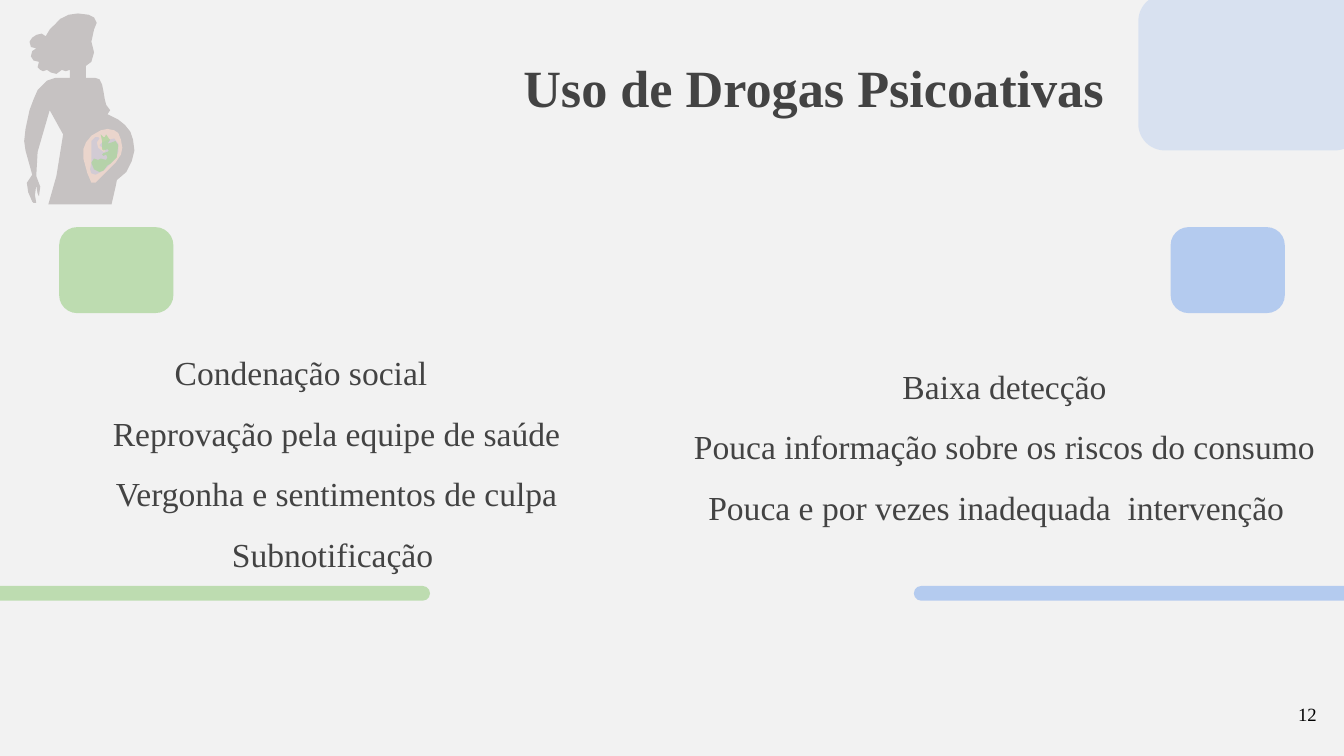
from dataclasses import dataclass

from lxml import etree
from pptx import Presentation
from pptx import util as u
from pptx.dml.color import RGBColor
from pptx.enum import shapes, text
from pptx.oxml.ns import qn


@dataclass(frozen=True)
class Theme:
    font: str = "Times New Roman"
    background: str = "F2F2F2"
    ink: str = "434343"
    number_ink: str = "000000"
    skin: str = "C6C2C2"
    womb: str = "F2D9CF"
    green: str = "ABD59A"
    blue: str = "8CB1EE"
    title_size: int = 28
    body_size: int = 18
    number_size: int = 10


THEME = Theme()

BODY = [
    (0.41, 0), (0.34, 0.01), (0.28, 0.04), (0.24, 0.08), (0.2, 0.12), (0.17, 0.17),
    (0.14, 0.15), (0.1, 0.16), (0.07, 0.18), (0.05, 0.21), (0.06, 0.25), (0.1, 0.26),
    (0.07, 0.28), (0.06, 0.32), (0.08, 0.35), (0.12, 0.36), (0.11, 0.4), (0.13, 0.42),
    (0.15, 0.43), (0.18, 0.42), (0.21, 0.44), (0.25, 0.45), (0.29, 0.42), (0.32, 0.43),
    (0.35, 0.42), (0.35, 0.48), (0.3, 0.48), (0.24, 0.48), (0.18, 0.5), (0.11, 0.57),
    (0.08, 0.64), (0.05, 0.72), (0.02, 0.86), (0.01, 0.95), (0.02, 1.02),
    (0.07, 1.2), (0.03, 1.26), (0.04, 1.33), (0.07, 1.4), (0.08, 1.41), (0.1, 1.41),
    (0.09, 1.35), (0.1, 1.28), (0.11, 1.34), (0.12, 1.36), (0.13, 1.29), (0.1, 1.21),
    (0.11, 1.03), (0.2, 0.72), (0.3, 0.9), (0.25, 1.21), (0.19, 1.42), (0.66, 1.42),
    (0.69, 1.29), (0.7, 1.24), (0.77, 1.18), (0.81, 1.1), (0.83, 1.02), (0.82, 0.94),
    (0.8, 0.88), (0.76, 0.83), (0.71, 0.79), (0.63, 0.75), (0.65, 0.72), (0.62, 0.68),
    (0.61, 0.64), (0.6, 0.58), (0.59, 0.53), (0.57, 0.49), (0.54, 0.48), (0.47, 0.48),
    (0.47, 0.39), (0.51, 0.36), (0.53, 0.29), (0.51, 0.21), (0.53, 0.12), (0.55, 0.07),
    (0.53, 0.03), (0.49, 0.01),
]
WOMB = [
    (0.63, 0.86), (0.58, 0.87), (0.51, 0.91), (0.47, 0.96), (0.45, 1.01), (0.45, 1.08),
    (0.48, 1.19), (0.51, 1.26), (0.54, 1.26), (0.69, 1.11), (0.73, 1.05), (0.74, 1),
    (0.73, 0.94), (0.71, 0.89), (0.68, 0.87),
]
FLUID = [
    (0.54, 0.92), (0.51, 0.95), (0.51, 1.11), (0.5, 1.16), (0.51, 1.19), (0.54, 1.2),
    (0.6, 1.17), (0.69, 1.08), (0.71, 1.03), (0.71, 0.97), (0.68, 0.93), (0.64, 0.94),
    (0.59, 0.96), (0.57, 0.98), (0.58, 0.99), (0.61, 1.01), (0.61, 1.03), (0.6, 1.03),
    (0.56, 1), (0.55, 0.96), (0.57, 0.93), (0.56, 0.92),
]
FETUS = [
    (0.62, 0.9), (0.61, 0.92), (0.6, 0.92), (0.58, 0.9), (0.59, 0.95), (0.59, 1.01),
    (0.6, 1.02), (0.63, 1.01), (0.64, 1.02), (0.63, 1.03), (0.6, 1.04), (0.59, 1.05),
    (0.6, 1.06), (0.62, 1.05), (0.63, 1.07), (0.62, 1.09), (0.58, 1.08), (0.56, 1.09),
    (0.53, 1.08), (0.51, 1.11), (0.53, 1.16), (0.57, 1.18), (0.6, 1.17), (0.63, 1.13),
    (0.65, 1.12), (0.7, 1.07), (0.71, 0.98), (0.69, 0.95), (0.66, 0.96), (0.63, 0.97),
    (0.65, 0.94), (0.64, 0.93),
]


def paint(shape, color, opacity):
    shape.shadow.inherit = False
    shape.line.fill.background()
    shape.fill.solid()
    shape.fill.fore_color.rgb = RGBColor.from_string(color)
    if opacity < 100:
        color_element = shape.fill._xPr.find(qn("a:solidFill"))[0]
        etree.SubElement(color_element, qn("a:alpha"), val=str(opacity * 1000))


def add_rounded(slide, box, corner, color, opacity):
    rounded = slide.shapes.add_shape(
        shapes.MSO_SHAPE.ROUNDED_RECTANGLE, *map(u.Inches, box))
    rounded.adjustments[0] = corner
    paint(rounded, color, opacity)


def add_outline(slide, left, top, points, color, opacity):
    corners = [(u.Inches(left + x), u.Inches(top + y)) for x, y in points]
    builder = slide.shapes.build_freeform(*corners[0])
    builder.add_line_segments(corners[1:], close=True)
    paint(builder.convert_to_shape(), color, opacity)


def add_frame(slide, box, inset=0.1):
    frame = slide.shapes.add_textbox(*map(u.Inches, box)).text_frame
    frame.word_wrap = True
    frame.margin_left = frame.margin_right = u.Inches(inset)
    frame.margin_top = frame.margin_bottom = u.Inches(inset)
    return frame


def add_run(paragraph, wording, size, color, bold=False):
    run = paragraph.add_run()
    run.text = wording
    run.font.name = THEME.font
    run.font.size = u.Pt(size)
    run.font.bold = bold
    run.font.color.rgb = RGBColor.from_string(color)


def add_title(slide, box, wording):
    heading = add_frame(slide, box).paragraphs[0]
    heading.alignment = text.PP_ALIGN.RIGHT
    add_run(heading, wording, THEME.title_size, THEME.ink, bold=True)


def add_barriers(slide, box, barriers):
    frame = add_frame(slide, box)
    for index, (wording, left, indent, right) in enumerate(barriers):
        barrier = frame.add_paragraph() if index else frame.paragraphs[0]
        barrier.alignment = text.PP_ALIGN.CENTER
        barrier.line_spacing = 1.5
        properties = barrier._p.get_or_add_pPr()
        for name, length in (("marL", left), ("marR", right), ("indent", indent)):
            properties.set(name, str(u.Inches(length)))
        add_run(barrier, wording, THEME.body_size, THEME.ink)


def add_pregnant_woman(slide, left, top):
    for points, color, opacity in (
        (BODY, THEME.skin, 100),
        (WOMB, THEME.womb, 84),
        (FLUID, THEME.blue, 25),
        (FETUS, THEME.green, 74),
    ):
        add_outline(slide, left, top, points, color, opacity)


def add_column_accents(slide, tile_left, bar_left, bar_width, color, opacity):
    add_rounded(slide, (bar_left, 4.36, bar_width, 0.11), 0.5, color, opacity)
    add_rounded(slide, (tile_left, 1.69, 0.85, 0.64), 0.21, color, opacity)


def add_page_number(slide, box, number):
    frame = add_frame(slide, box)
    frame.word_wrap = False
    frame.margin_top = frame.margin_bottom = u.Inches(0.05)
    add_run(frame.paragraphs[0], number, THEME.number_size, THEME.number_ink)


def main():
    deck = Presentation()
    deck.slide_width, deck.slide_height = u.Inches(10), u.Inches(10 * 9 / 16)
    slide = deck.slides.add_slide(deck.slide_layouts[6])
    slide.background.fill.solid()
    slide.background.fill.fore_color.rgb = RGBColor.from_string(THEME.background)

    add_rounded(slide, (8.47, -0.04, 1.66, 1.16), 0.17, THEME.blue, 25)
    add_barriers(slide, (-0.33, 2.37, 5.02, 2.04), [
        ("Condenação social", 0.5, -0.38, 0),
        ("Reprovação pela equipe de saúde", 1, -0.35, 0),
        ("Vergonha e sentimentos de culpa", 1, -0.35, 0),
        ("Subnotificação", 1, -0.35, 0.06),
    ])
    add_title(slide, (3.2, 0.31, 5.11, 0.69), "Uso de Drogas Psicoativas")
    add_barriers(slide, (4.84, 2.47, 5.27, 1.7), [
        ("Baixa detecção", 0, 0, 0),
        ("Pouca informação sobre os riscos do consumo", 0, 0, 0),
        ("Pouca e por vezes inadequada  intervenção", 0, 0, 0.12),
    ])
    add_column_accents(slide, 0.44, -0.33, 3.53, THEME.green, 74)
    add_column_accents(slide, 8.71, 6.8, 3.46, THEME.blue, 60)
    add_pregnant_woman(slide, 0.17, 0.1)
    add_page_number(slide, (9.56, 5.18, 0.34, 0.27), "12")
    deck.save("out.pptx")


if __name__ == "__main__":
    main()
